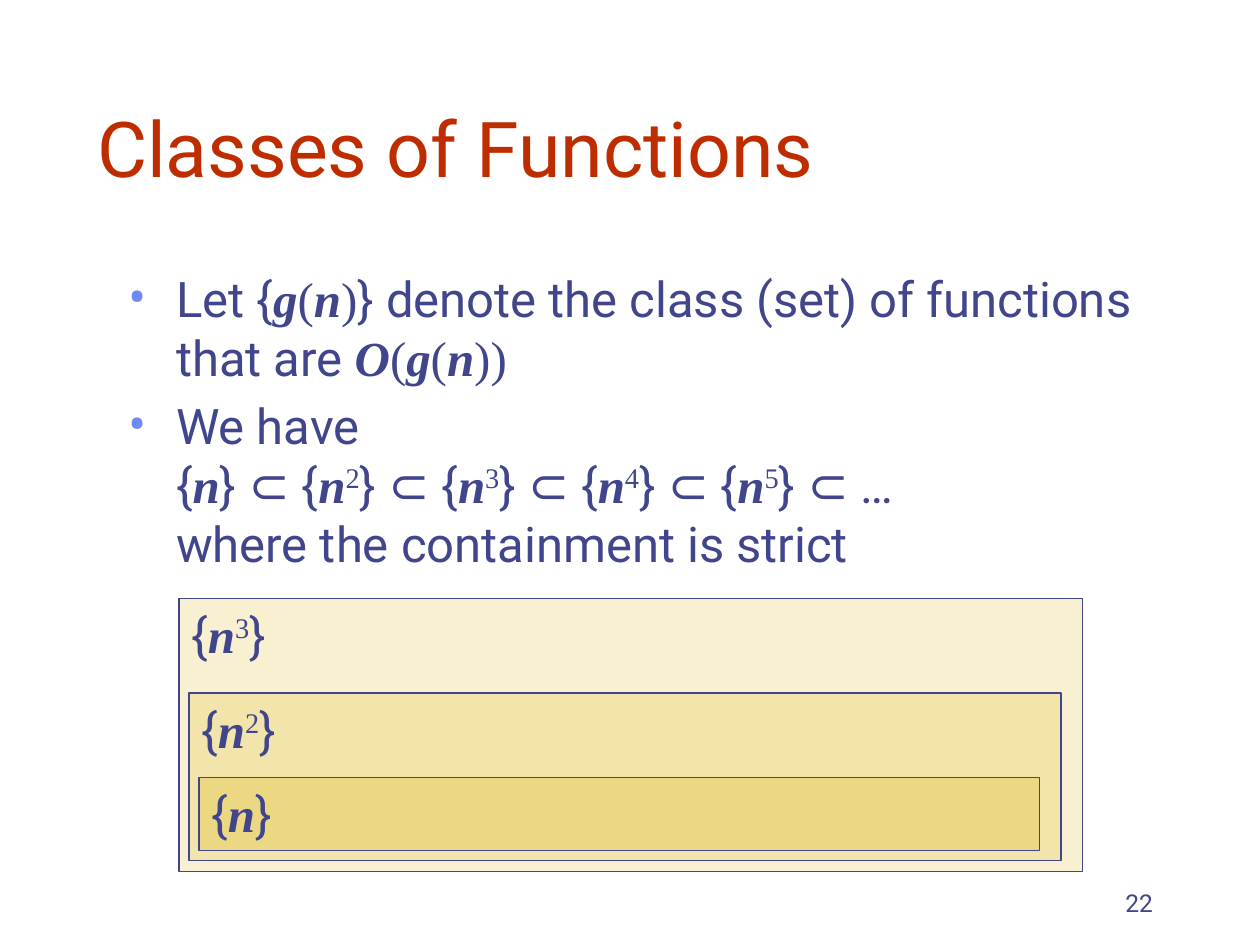
from typing import NamedTuple

from lxml.etree import SubElement
from pptx import Presentation
from pptx.dml.color import RGBColor
from pptx.enum.shapes import MSO_SHAPE
from pptx.enum.text import MSO_ANCHOR as Anchor, MSO_AUTO_SIZE as AutoSize, PP_ALIGN as Align
from pptx.oxml.ns import qn
from pptx.util import Inches, Pt

INK, RED, BULLET = "40458C", "BE2D00", "6F89F7"
SANS, SERIF = "Roboto", "Times New Roman"


class Piece(NamedTuple):
    text: str
    font: str = SANS
    strong: bool = False
    raised: bool = False


class ClassBox(NamedTuple):
    left: float
    top: float
    width: float
    height: float
    fill: str
    power: str


def color(value: str) -> RGBColor:
    return RGBColor.from_string(value)


def variable(name: str) -> Piece:
    return Piece(name, SERIF, strong=True)


def paren(text: str) -> Piece:
    return Piece(text, SERIF)


def class_of(power: str) -> list[Piece]:
    """The class {n} or {n^power}."""
    exponent = [Piece(power, SERIF, raised=True)] if power else []
    return [Piece("{"), variable("n"), *exponent, Piece("}")]


def write(para, pieces: list[Piece], size: float = 28, ink: str = INK) -> None:
    for piece in pieces:
        if piece.text == "\n":
            para.add_line_break()
            continue
        span = para.add_run()
        span.text = piece.text
        span.font.color.rgb = color(ink)
        style = {"name": piece.font, "size": Pt(size),
                 "bold": piece.strong, "italic": piece.strong}
        for name, value in style.items():
            setattr(span.font, name, value)
        if piece.raised:
            span._r.get_or_add_rPr().set("baseline", "30000")


def set_frame(frame, anchor: Anchor = Anchor.TOP) -> None:
    settings = {"word_wrap": True, "auto_size": AutoSize.NONE, "vertical_anchor": anchor}
    for name, value in settings.items():
        setattr(frame, name, value)


def add_bullet(para) -> None:
    props = para._p.get_or_add_pPr()
    props.set("marL", str(Inches(0.38)))
    props.set("indent", str(-Inches(0.38)))
    tint = SubElement(props, qn("a:buClr"))
    SubElement(tint, qn("a:srgbClr"), val=BULLET)
    SubElement(props, qn("a:buSzPct"), val="110000")
    SubElement(props, qn("a:buFont"), typeface=SANS)
    SubElement(props, qn("a:buChar"), char="•")


def draw_class(page, item: ClassBox) -> None:
    box = page.shapes.add_shape(
        MSO_SHAPE.RECTANGLE, *map(Inches, (item.left, item.top, item.width, item.height)))
    box.shadow.inherit = False
    box.fill.solid()
    box.fill.fore_color.rgb = color(item.fill)
    box.line.color.rgb = color(INK)
    box.line.width = Pt(0.75)
    set_frame(box.text_frame)
    para = box.text_frame.paragraphs[0]
    para.alignment = Align.LEFT
    write(para, class_of(item.power))


def main() -> None:
    deck = Presentation()
    deck.slide_width, deck.slide_height = Inches(10), Inches(7.5)
    page = deck.slides.add_slide(deck.slide_layouts[5])

    # Title
    title = page.shapes.title
    place = {"left": 0.67, "top": 0.33, "width": 8.5, "height": 1.25}
    for name, value in place.items():
        setattr(title, name, Inches(value))
    set_frame(title.text_frame, Anchor.BOTTOM)
    heading = title.text_frame.paragraphs[0]
    heading.alignment = Align.LEFT
    write(heading, [Piece("Classes of Functions")], 44, RED)

    # Bulleted statements
    definition = [
        Piece("Let {"), variable("g"), paren("("), variable("n"), paren(")"),
        Piece("} denote the class (set) of functions that are "),
        variable("O"), paren("("), variable("g"), paren("("), variable("n"), paren("))"),
    ]
    chain = [Piece("We have"), Piece("\n")]
    for power in ("", "2", "3", "4", "5"):
        chain += [*class_of(power), Piece(" ⊂ ")]
    chain += [Piece("…"), Piece("\n"), Piece("where the containment is strict")]

    body = page.shapes.add_textbox(*map(Inches, (0.92, 2.08, 8.33, 2.58))).text_frame
    set_frame(body)
    for index, pieces in enumerate((definition, chain)):
        para = body.add_paragraph() if index else body.paragraphs[0]
        if index:
            para.space_before = Pt(5.6)
        add_bullet(para)
        write(para, pieces)

    # Nested classes, outermost first
    for item in (
        ClassBox(1.42, 4.75, 7.17, 2.17, "F8F0D0", "3"),
        ClassBox(1.5, 5.5, 6.92, 1.33, "F2E4AA", "2"),
        ClassBox(1.58, 6.17, 6.67, 0.58, "ECD882", ""),
    ):
        draw_class(page, item)

    # Page number
    number = page.shapes.add_textbox(*map(Inches, (7.17, 6.83, 2.08, 0.5))).text_frame
    set_frame(number, Anchor.BOTTOM)
    number.paragraphs[0].alignment = Align.RIGHT
    write(number.paragraphs[0], [Piece("22")], 14)

    deck.save("out.pptx")


if __name__ == "__main__":
    main()
